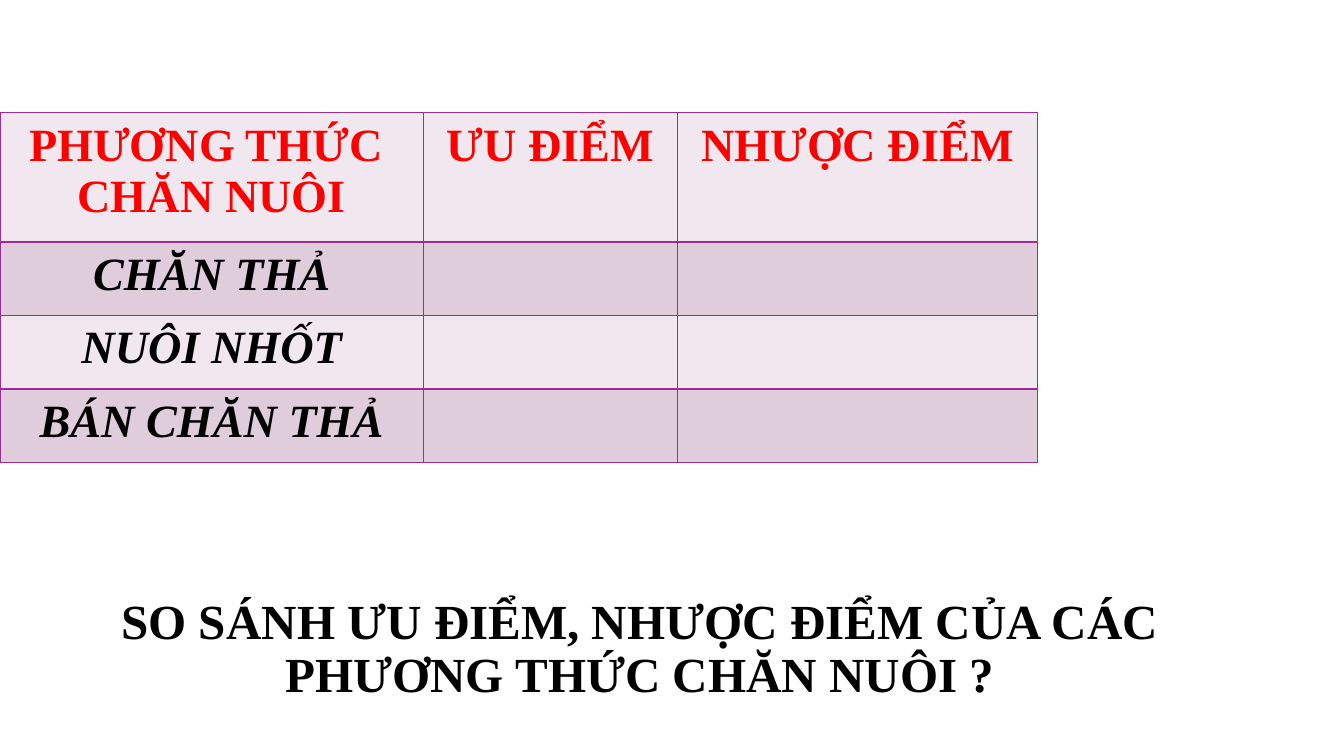
import pptx
import pptx.dml.color
import pptx.enum.text
import pptx.oxml
import pptx.oxml.ns
import pptx.util
from dataclasses import dataclass

PX = 9144


@dataclass(frozen=True)
class Theme:
    font: str = "Times New Roman"
    ink: str = "000000"
    red: str = "FF0000"
    line: str = "A02B93"
    bands: tuple = ("F0E8EE", "DFCDDC")
    title: int = 35
    cell: int = 33
    rule: int = 1


def emu(*sizes):
    return [pptx.util.Emu(size * PX) for size in sizes]


def color(code):
    return pptx.dml.color.RGBColor.from_string(code)


def apply(target, values):
    for name, value in values.items():
        setattr(target, name, value)


class Deck:
    def __init__(self, theme, width, height):
        self.theme = theme
        self.show = pptx.Presentation()
        wide, high = emu(width, height)
        apply(self.show, {"slide_width": wide, "slide_height": high})
        self.slide = self.show.slides.add_slide(self.show.slide_layouts[6])

    def label(self, frame, text, size, ink, italic=False, spacing=None):
        frame.text = text
        for para in frame.paragraphs:
            apply(para, {"alignment": pptx.enum.text.PP_ALIGN.CENTER,
                         "line_spacing": spacing})
            for run in para.runs:
                apply(run.font, {"name": self.theme.font, "bold": True,
                                 "size": pptx.util.Pt(size), "italic": italic})
                run.font.color.rgb = color(ink)

    def title(self, text, box):
        frame = self.slide.shapes.add_textbox(*emu(*box)).text_frame
        apply(frame, {"word_wrap": True,
                      "vertical_anchor": pptx.enum.text.MSO_ANCHOR.BOTTOM})
        self.label(frame, text, self.theme.title, self.theme.ink, spacing=0.9)

    def border(self, cell):
        props = cell._tc.get_or_add_tcPr()
        width = pptx.util.Pt(self.theme.rule)
        for spot, side in enumerate("LRTB"):
            props.insert(spot, pptx.oxml.parse_xml(
                f'<a:ln{side} {pptx.oxml.ns.nsdecls("a")} w="{width}">'
                f'<a:solidFill><a:srgbClr val="{self.theme.line}"/></a:solidFill>'
                f'</a:ln{side}>'))

    def table(self, rows, left, top, widths, heights):
        box = emu(left, top, sum(widths), sum(heights))
        grid = self.slide.shapes.add_table(len(rows), len(widths), *box).table
        apply(grid, {"first_row": False, "horz_banding": False})
        for col, width in zip(grid.columns, emu(*widths)):
            col.width = width
        for row, height in zip(grid.rows, emu(*heights)):
            row.height = height
        side, edge = emu(14, 7)
        for r, texts in enumerate(rows):
            for c, text in enumerate(texts):
                cell = grid.cell(r, c)
                apply(cell, {"margin_left": side, "margin_right": side,
                             "margin_top": edge, "margin_bottom": edge})
                cell.fill.solid()
                cell.fill.fore_color.rgb = color(self.theme.bands[r % 2])
                self.border(cell)
                if text:
                    ink = self.theme.ink if r else self.theme.red
                    self.label(cell.text_frame, text, self.theme.cell, ink, r > 0)


def main():
    deck = Deck(Theme(), 1333, 750)
    deck.title("SO SÁNH ƯU ĐIỂM, NHƯỢC ĐIỂM CỦA CÁC PHƯƠNG THỨC CHĂN NUÔI ?",
               (50, 542, 1170, 160))
    modes = ["CHĂN THẢ", "NUÔI NHỐT", "BÁN CHĂN THẢ"]
    rows = [["PHƯƠNG THỨC \nCHĂN NUÔI", "ƯU ĐIỂM", "NHƯỢC ĐIỂM"]]
    rows += [[mode, "", ""] for mode in modes]
    deck.table(rows, 0, 112, [420, 252, 357], [128] + [73] * len(modes))
    deck.show.save("out.pptx")


if __name__ == "__main__":
    main()
